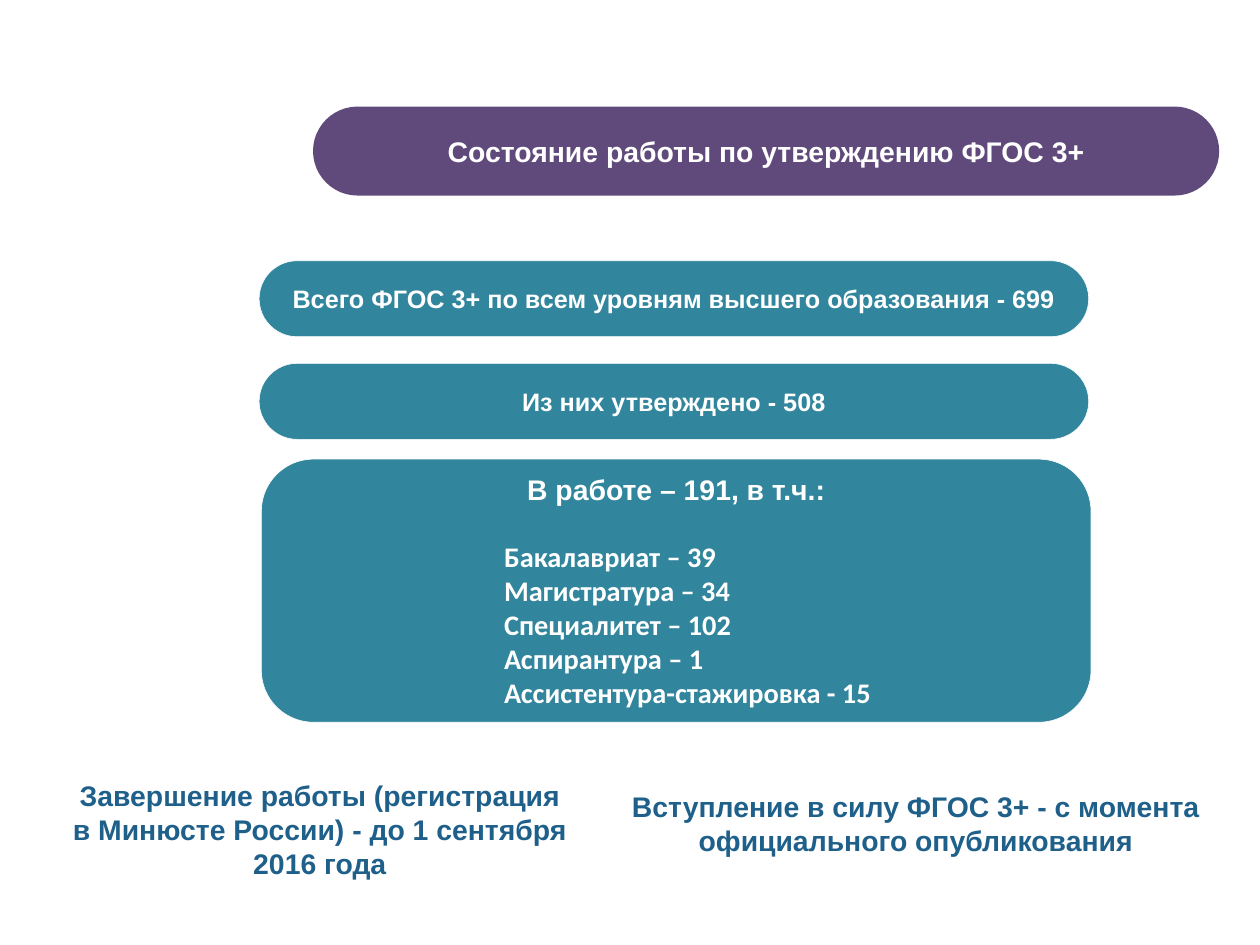
"""Builds the slide on the approval status of the FGOS 3+ standards."""
from lxml import etree
from pptx import Presentation
from pptx.dml.color import RGBColor
from pptx.enum.shapes import MSO_SHAPE
from pptx.enum.text import MSO_ANCHOR, MSO_AUTO_SIZE, PP_ALIGN
from pptx.oxml.ns import qn
from pptx.util import Inches, Pt

ROUNDED = MSO_SHAPE.ROUNDED_RECTANGLE
MIDDLE, TOP = MSO_ANCHOR.MIDDLE, MSO_ANCHOR.TOP
CENTER, LEFT = PP_ALIGN.CENTER, PP_ALIGN.LEFT
NO_AUTOFIT = MSO_AUTO_SIZE.NONE

COLORS = {"banner": "604A7B", "panel": "31859C", "white": "FFFFFF", "note": "1F608B"}

HEADING = "Состояние работы по утверждению ФГОС 3+"
TOTALS = [
    "Всего ФГОС 3+ по всем уровням высшего образования - 699",
    "Из них утверждено - 508",
]
IN_PROGRESS = "В работе – 191, в т.ч.:"
LEVELS = [
    "Бакалавриат – 39",
    "Магистратура – 34",
    "Специалитет – 102",
    "Аспирантура – 1",
    "Ассистентура-стажировка - 15",
]
NOTES = [
    ("Завершение работы (регистрация в Минюсте России) - до 1 сентября 2016 года",
     (1.16, 13.68, 8.96, 1.92)),
    ("Вступление в силу ФГОС 3+ - с момента официального опубликования",
     (11.03, 13.88, 10.24, 1.31)),
]

BANNER_BOX = (5.52, 1.88, 15.98, 1.57)
TOTAL_LEFT, TOTAL_TOP, TOTAL_STEP = 4.57, 4.6, 1.81
TOTAL_WIDTH, TOTAL_HEIGHT = 14.63, 1.34
PANEL_BOX = (4.61, 8.1, 14.63, 4.64)
PANEL_INSET = 0.27
LEVEL_INDENT = 3.91


def inches(box):
    return [Inches(length) for length in box]


def color(name):
    return RGBColor.from_string(COLORS[name])


def add_pill(box, fill, roundness=0.5, outline=None):
    pill = slide.shapes.add_shape(ROUNDED, *inches(box))
    pill.shadow.inherit = False
    pill.adjustments[0] = roundness
    pill.fill.solid()
    pill.fill.fore_color.rgb = color(fill)
    if outline:
        pill.line.color.rgb = color(outline)
        pill.line.width = Pt(0.75)
    else:
        pill.line.fill.background()
    return pill


def write(holder, text, size=36, font="Arial", ink="white", align=CENTER,
          anchor=MIDDLE, indent=0, before=0, append=False):
    frame = holder.text_frame
    frame.word_wrap = True
    frame.auto_size = NO_AUTOFIT
    frame.vertical_anchor = anchor
    paragraph = frame.add_paragraph() if append else frame.paragraphs[0]
    properties = paragraph._p.get_or_add_pPr()
    properties.set("marL", str(Inches(indent)))
    properties.set("indent", "0")
    etree.SubElement(properties, qn("a:buNone"))
    paragraph.alignment = align
    paragraph.space_before = Pt(before)
    run = paragraph.add_run()
    run.text = text
    run.font.name = font
    run.font.size = Pt(size)
    run.font.bold = True
    run.font.color.rgb = color(ink)


def place_in_front(placeholder, box):
    placeholder.left, placeholder.top, placeholder.width, placeholder.height = inches(box)
    slide.shapes._spTree.append(placeholder._element)


deck = Presentation()
deck.slide_width, deck.slide_height = Inches(22.22), Inches(16.67)
slide = deck.slides.add_slide(deck.slide_layouts[1])
heading, breakdown = slide.placeholders

add_pill(BANNER_BOX, "banner")
place_in_front(heading, BANNER_BOX)
write(heading, HEADING)

for row, total in enumerate(TOTALS):
    total_box = (TOTAL_LEFT, TOTAL_TOP + row * TOTAL_STEP, TOTAL_WIDTH, TOTAL_HEIGHT)
    write(add_pill(total_box, "panel", outline="white"), total, size=32)

add_pill(PANEL_BOX, "panel", roundness=0.198, outline="white")
left, top, width, height = PANEL_BOX
place_in_front(breakdown, (left + PANEL_INSET, top, width - 2 * PANEL_INSET, height))
write(breakdown, IN_PROGRESS)
for row, level in enumerate(LEVELS):
    write(breakdown, level, font="Calibri", align=LEFT, indent=LEVEL_INDENT,
          before=0 if row else 43, append=True)

for note, note_box in NOTES:
    write(slide.shapes.add_textbox(*inches(note_box)), note, ink="note", anchor=TOP)

deck.save("out.pptx")
